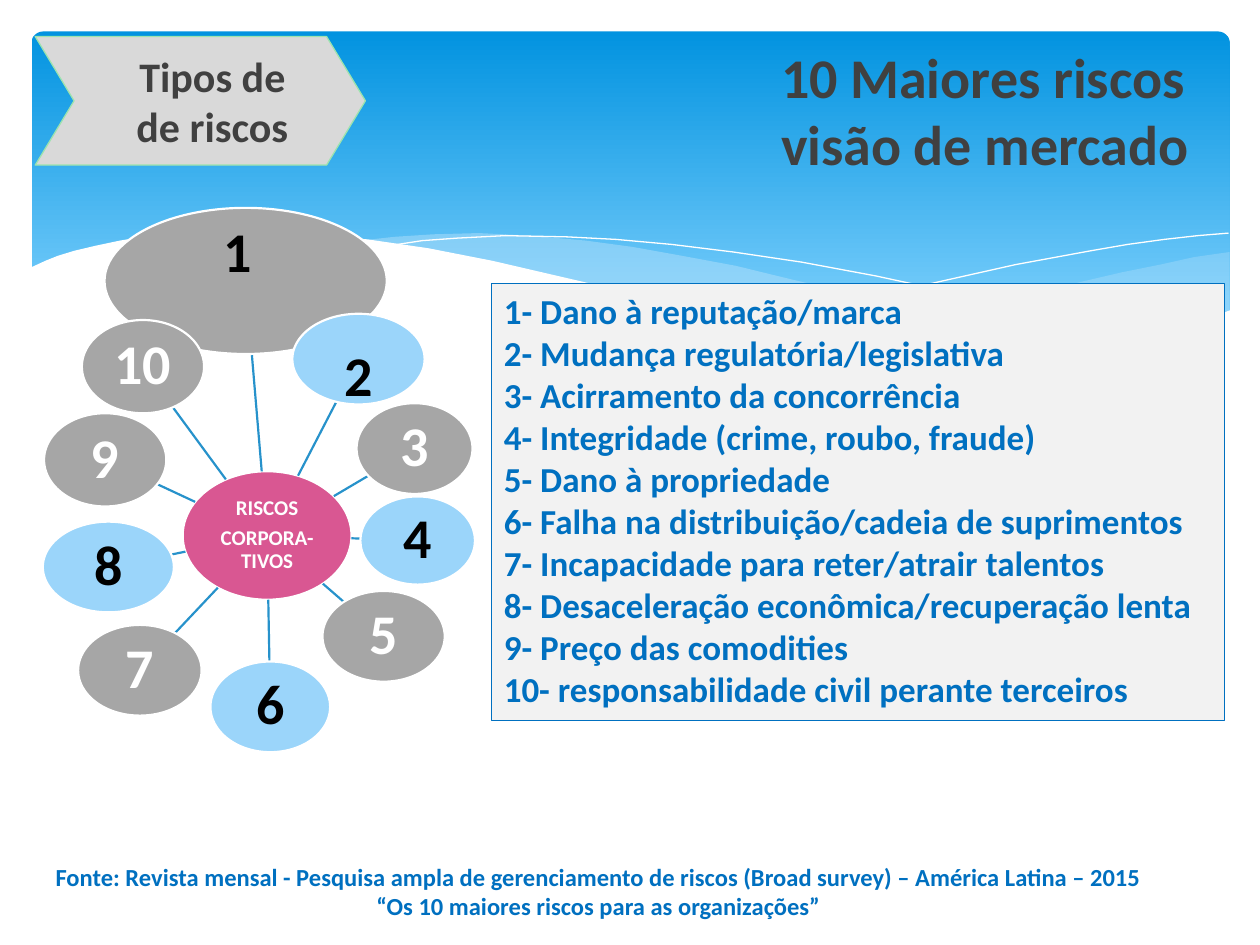
import math

import pptx
import pptx.dml.color
import pptx.enum.shapes
import pptx.enum.text
import pptx.oxml
import pptx.oxml.ns
import pptx.util

Inches = pptx.util.Inches
Pt = pptx.util.Pt
SHAPE = pptx.enum.shapes.MSO_SHAPE
ALIGN = pptx.enum.text.PP_ALIGN
ANCHOR = pptx.enum.text.MSO_ANCHOR

FONT = "Calibri"
WHITE, BLACK, GRAY, SKY = "FFFFFF", "000000", "A6A6A6", "9BD5FA"
BLUE, DARK = "0070C0", "404040"

RIGHT_WAVE = [
    (9.76, 2), (9.48, 2.04), (9.21, 2.1), (8.91, 2.16), (8.61, 2.23), (8.05, 2.37),
    (7.53, 2.48), (7.06, 2.57), (6.61, 2.65), (6.91, 2.69), (7.32, 2.74), (7.69, 2.77),
    (8.14, 2.78), (8.54, 2.76), (8.89, 2.72), (9.21, 2.65), (9.49, 2.57), (9.76, 2.47),
]
MIDDLE_WAVE = [
    (8.93, 2.73), (8.37, 2.65), (7.75, 2.54), (7.06, 2.4), (6.29, 2.22), (5.84, 2.11),
    (5.41, 2.03), (5.02, 1.96), (4.65, 1.91), (4.2, 1.87), (3.8, 1.85), (3.44, 1.86),
    (3.13, 1.88), (2.86, 1.91), (3.23, 1.96), (3.62, 2.03), (4.04, 2.11), (4.49, 2.22),
    (5.3, 2.4), (6.01, 2.55), (6.65, 2.66), (7.22, 2.74), (7.73, 2.77), (8.18, 2.78),
    (8.57, 2.77), (8.93, 2.73),
]
LONG_CREST = [
    (3.09, 1.95), (3.35, 1.91), (3.63, 1.89), (4.01, 1.87), (4.5, 1.88), (4.89, 1.9),
    (5.33, 1.94), (5.82, 2), (6.36, 2.08), (6.95, 2.19), (7.6, 2.33), (8.31, 2.51),
    (9.07, 2.72),
]
SHORT_CREST = [
    (6.13, 2.57), (6.53, 2.46), (6.95, 2.35), (7.48, 2.23), (8.06, 2.1), (8.66, 1.99),
    (8.95, 1.94), (9.24, 1.9), (9.51, 1.87), (9.75, 1.85),
]
WHITE_WAVE = [
    (9.77, 2.46), (9.5, 2.56), (9.2, 2.65), (8.87, 2.71), (8.5, 2.75), (8.09, 2.77),
    (7.61, 2.75), (7.08, 2.7), (6.48, 2.62), (5.79, 2.5), (5.03, 2.33), (4.47, 2.2),
    (3.91, 2.07), (3.4, 1.97), (2.92, 1.9), (2.5, 1.86), (2.11, 1.84), (1.77, 1.84),
    (1.46, 1.85), (1.19, 1.87), (0.95, 1.91), (0.76, 1.95), (0.59, 1.99), (0.46, 2.03),
    (0.36, 2.07), (0.23, 2.13), (0.23, 3.29), (9.77, 3.29),
]

HUB = (1.45, 3.74, 1.34, 1.02)
BUBBLES = [
    ("1", (0.83, 1.65, 2.24, 1.16), GRAY, BLACK, (-0.06, -0.21)),
    ("2", (2.32, 2.49, 1.05, 0.72), SKY, BLACK, (0, 0.15)),
    ("3", (2.83, 3.2, 0.92, 0.72), GRAY, WHITE, (0, 0)),
    ("4", (2.86, 3.94, 0.91, 0.7), SKY, BLACK, (0, 0)),
    ("5", (2.56, 4.69, 0.97, 0.72), GRAY, WHITE, (0, 0)),
    ("6", (1.67, 5.25, 0.95, 0.72), SKY, BLACK, (0, 0)),
    ("7", (0.62, 4.96, 0.98, 0.72), GRAY, WHITE, (0, 0)),
    ("8", (0.34, 4.14, 1.04, 0.72), SKY, BLACK, (0, 0)),
    ("9", (0.35, 3.28, 0.97, 0.74), GRAY, WHITE, (0, 0)),
    ("10", (0.65, 2.54, 0.97, 0.74), GRAY, WHITE, (0, 0)),
]
RISKS = [
    "Dano à reputação/marca",
    "Mudança regulatória/legislativa",
    "Acirramento da concorrência",
    "Integridade (crime, roubo, fraude)",
    "Dano à propriedade",
    "Falha na distribuição/cadeia de suprimentos",
    "Incapacidade para reter/atrair talentos",
    "Desaceleração econômica/recuperação lenta",
    "Preço das comodities",
    "responsabilidade civil perante terceiros",
]


def color(value):
    return pptx.dml.color.RGBColor.from_string(value)


def paint(shape, fill=None, line=None, width=0.0, opacity=None):
    shape.shadow.inherit = False
    if fill:
        shape.fill.solid()
        shape.fill.fore_color.rgb = color(fill)
        if opacity:
            tint = shape.fill._xPr.find(".//" + pptx.oxml.ns.qn("a:srgbClr"))
            alpha = pptx.oxml.parse_xml(
                f'<a:alpha {pptx.oxml.ns.nsdecls("a")} val="{opacity * 1000}"/>')
            tint.append(alpha)
    else:
        shape.fill.background()
    if line:
        shape.line.color.rgb = color(line)
        shape.line.width = Pt(width)
    else:
        shape.line.fill.background()


def add_preset(slide, kind, box):
    return slide.shapes.add_shape(kind, *map(Inches, box))


def write(shape, text, size, tone, align=ALIGN.LEFT, anchor=ANCHOR.TOP, margin=None):
    frame = shape.text_frame
    frame.text = text
    frame.word_wrap = True
    frame.vertical_anchor = anchor
    if margin is not None:
        frame.margin_left = frame.margin_right = Inches(margin)
        frame.margin_top = frame.margin_bottom = Inches(margin)
    for paragraph in frame.paragraphs:
        paragraph.alignment = align
        for run in paragraph.runs:
            run.font.name = FONT
            run.font.size = Pt(size)
            run.font.bold = True
            run.font.color.rgb = color(tone)
    return frame


def add_text(slide, box, text, size, tone, **layout):
    return write(slide.shapes.add_textbox(*map(Inches, box)), text, size, tone, **layout)


def add_outline(slide, points, closed, **style):
    corners = [(Inches(x), Inches(y)) for x, y in points]
    builder = slide.shapes.build_freeform(*corners[0])
    builder.add_line_segments(corners[1:], close=closed)
    paint(builder.convert_to_shape(), **style)


def add_header(slide, box):
    panel = add_preset(slide, SHAPE.ROUNDED_RECTANGLE, box)
    panel.adjustments[0] = 0.034
    paint(panel)
    panel.fill.gradient()
    panel.fill.gradient_angle = 270
    for stop, position, tone in zip(panel.fill.gradient_stops, (0, 0.9), ("0293E0", "83D3FE")):
        stop.position = position
        stop.color.rgb = color(tone)
    add_outline(slide, RIGHT_WAVE, True, fill="C6E7FC", opacity=29)
    add_outline(slide, MIDDLE_WAVE, True, fill="C6E7FC", opacity=40)
    for crest in (LONG_CREST, SHORT_CREST):
        add_outline(slide, crest, False, line=WHITE)
    add_outline(slide, WHITE_WAVE, True, fill=WHITE)


def center(box):
    left, top, width, height = box
    return left + width / 2, top + height / 2


def edge_toward(box, target):
    x, y = center(box)
    dx, dy = target[0] - x, target[1] - y
    reach = math.hypot(dx / (box[2] / 2), dy / (box[3] / 2))
    return x + dx / reach, y + dy / reach


def add_spoke(slide, hub, bubble):
    ends = edge_toward(hub, center(bubble)) + edge_toward(bubble, center(hub))
    spoke = slide.shapes.add_connector(
        pptx.enum.shapes.MSO_CONNECTOR.STRAIGHT, *map(Inches, ends))
    spoke.line.color.rgb = color("2792CB")
    spoke.line.width = Pt(1.25)
    spoke._element.spPr.append(
        pptx.oxml.parse_xml(f'<a:effectLst {pptx.oxml.ns.nsdecls("a")}/>'))


def add_bubble(slide, box, text, size, fill, tone, shift=(0, 0)):
    paint(add_preset(slide, SHAPE.OVAL, box), fill=fill, line=WHITE, width=1.25)
    x, y = center(box)
    width, height = box[2] * 0.71, box[3] * 0.71
    label = (x - width / 2 + shift[0], y - height / 2 + shift[1], width, height)
    frame = add_text(slide, label, text, size, tone,
                     align=ALIGN.CENTER, anchor=ANCHOR.MIDDLE, margin=0.01)
    for paragraph in frame.paragraphs:
        paragraph.line_spacing = 0.9
        paragraph.space_after = Pt(size * 0.35)


def add_risk_wheel(slide, hub):
    add_bubble(slide, hub, "RISCOS\nCORPORA- TIVOS", 12, "D95792", WHITE)
    for number, box, fill, tone, shift in BUBBLES:
        add_spoke(slide, hub, box)
        add_bubble(slide, box, number, 32, fill, tone, shift)


def add_risk_list(slide, box):
    panel = add_preset(slide, SHAPE.RECTANGLE, box)
    paint(panel, fill="F2F2F2", line=BLUE, width=0.75)
    lines = [f"{number}- {risk}" for number, risk in enumerate(RISKS, 1)]
    write(panel, "\n".join(lines), 20, BLUE)


def add_tag(slide, box):
    tag = add_preset(slide, SHAPE.CHEVRON, box)
    tag.adjustments[0] = 0.302
    paint(tag, fill="D9D9D9", line="9DE3AE", width=0.75)
    frame = write(tag, "Tipos de\nde riscos", 24, DARK,
                  align=ALIGN.CENTER, anchor=ANCHOR.MIDDLE)
    frame.margin_left = Inches(0.29)


def main():
    presentation = pptx.Presentation()
    presentation.slide_width = Inches(10)
    presentation.slide_height = Inches(7.5)
    slide = presentation.slides.add_slide(presentation.slide_layouts[6])
    add_header(slide, (0.25, 0.25, 9.51, 2.7))
    add_risk_wheel(slide, HUB)
    add_text(slide, (6.1, 0.29, 4.09, 1.18), "10 Maiores riscos\nvisão de mercado", 32, DARK)
    add_text(slide, (0.12, 6.79, 9.26, 0.57),
             "Fonte: Revista mensal - Pesquisa ampla de gerenciamento de riscos "
             "(Broad survey) – América Latina – 2015\v"
             "“Os 10 maiores riscos para as organizações”",
             14, BLUE, align=ALIGN.CENTER)
    add_risk_list(slide, (3.9, 2.25, 5.82, 3.47))
    add_tag(slide, (0.28, 0.29, 2.62, 1.02))
    presentation.save("out.pptx")


if __name__ == "__main__":
    main()
